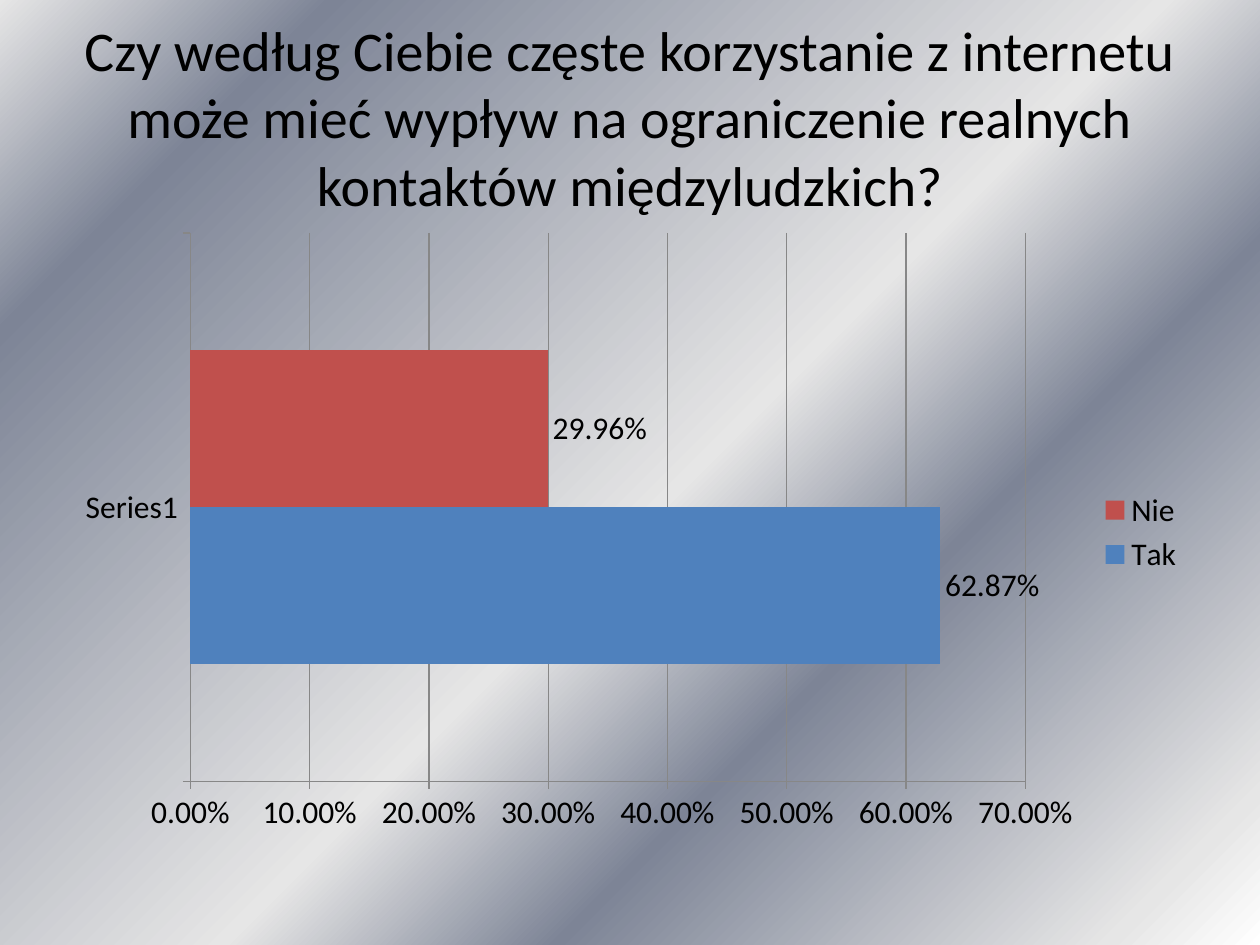
from lxml.etree import SubElement
from pptx import Presentation
from pptx.chart.data import CategoryChartData
from pptx.dml.color import RGBColor
from pptx.enum.chart import (XL_CHART_TYPE, XL_LABEL_POSITION,
                             XL_LEGEND_POSITION, XL_TICK_MARK)
from pptx.enum.text import MSO_ANCHOR, PP_ALIGN
from pptx.oxml.ns import qn
from pptx.util import Pt

HUES = {"text": "000000", "axis": "878787", "yes": "4F81BD", "no": "C0504D",
        "white": "FFFFFF", "light": "E6E6E6", "steel": "7D8496"}


def rgb(name):
    return RGBColor.from_string(HUES[name])


def set_font(font, size, hue="text", face="Calibri"):
    font.name = face
    font.size = Pt(size)
    font.color.rgb = rgb(hue)


def write(frame, text, size=18, hue="text", align=PP_ALIGN.LEFT,
          anchor=MSO_ANCHOR.TOP):
    frame.word_wrap = True
    frame.vertical_anchor = anchor
    para = frame.paragraphs[0]
    para.alignment = align
    run = para.add_run()
    run.text = text
    set_font(run.font, size, hue)


class Deck:
    def __init__(self, width, height):
        self.show = Presentation()
        self.show.slide_width = Pt(width)
        self.show.slide_height = Pt(height)
        self.slide = self.show.slides.add_slide(self.show.slide_layouts[6])

    def back(self, stops, angle):
        fill = self.slide.background.fill
        fill.gradient()
        fill.gradient_angle = angle
        # Extra gradient stops need XML
        stop_list = self.slide.element.xpath(".//a:gsLst")[0]
        for old in list(stop_list):
            stop_list.remove(old)
        for pos, hue in stops:
            stop = SubElement(stop_list, qn("a:gs"), pos=str(pos * 1000))
            SubElement(stop, qn("a:srgbClr"), val=HUES[hue])

    def text(self, box, text, **style):
        shape = self.slide.shapes.add_textbox(*map(Pt, box))
        write(shape.text_frame, text, **style)

    def bars(self, box, group, series, top, step, form="0.00%"):
        data = CategoryChartData(number_format=form)
        data.categories = [group]
        for name, value, _ in series:
            data.add_series(name, [value])
        chart = self.slide.shapes.add_chart(
            XL_CHART_TYPE.BAR_CLUSTERED, *map(Pt, box), data).chart
        set_font(chart.font, 18)
        chart.has_title = False

        # Legend
        chart.has_legend = True
        chart.legend.position = XL_LEGEND_POSITION.RIGHT
        chart.legend.include_in_layout = False

        # Axes and grid
        scale = chart.value_axis
        scale.minimum_scale, scale.maximum_scale = 0, top
        scale.major_unit = step
        scale.has_major_gridlines = True
        scale.tick_labels.number_format = form
        scale.tick_labels.number_format_is_linked = False
        for axis in (scale, chart.category_axis):
            axis.major_tick_mark = XL_TICK_MARK.OUTSIDE
            axis.minor_tick_mark = XL_TICK_MARK.NONE
        for part in (scale, chart.category_axis, scale.major_gridlines):
            part.format.line.color.rgb = rgb("axis")
            part.format.line.width = Pt(0.75)

        # Bars and value labels
        plot = chart.plots[0]
        plot.gap_width = 150
        plot.vary_by_categories = False
        for bar, (_, _, hue) in zip(plot.series, series):
            bar.format.fill.solid()
            bar.format.fill.fore_color.rgb = rgb(hue)
            labels = bar.data_labels
            labels.show_value = True
            labels.position = XL_LABEL_POSITION.OUTSIDE_END
            labels.number_format = form
            labels.number_format_is_linked = False
            set_font(labels.font, 18)


def main():
    deck = Deck(720, 540)

    # Metallic background
    deck.back([(0, "white"), (7, "light"), (32, "steel"), (47, "light"),
               (85, "steel"), (100, "light")], angle=135)

    # Question
    deck.text((36, 21.6, 648, 90),
              "Czy według Ciebie częste korzystanie z internetu może mieć "
              "wypływ na ograniczenie realnych kontaktów międzyludzkich?",
              size=32, align=PP_ALIGN.CENTER, anchor=MSO_ANCHOR.MIDDLE)

    # Answers
    deck.bars((36, 126, 648, 356.4), "Series1",
              [("Tak", 0.6287, "yes"), ("Nie", 0.2996, "no")],
              top=0.7, step=0.1)

    deck.show.save("out.pptx")


if __name__ == "__main__":
    main()
